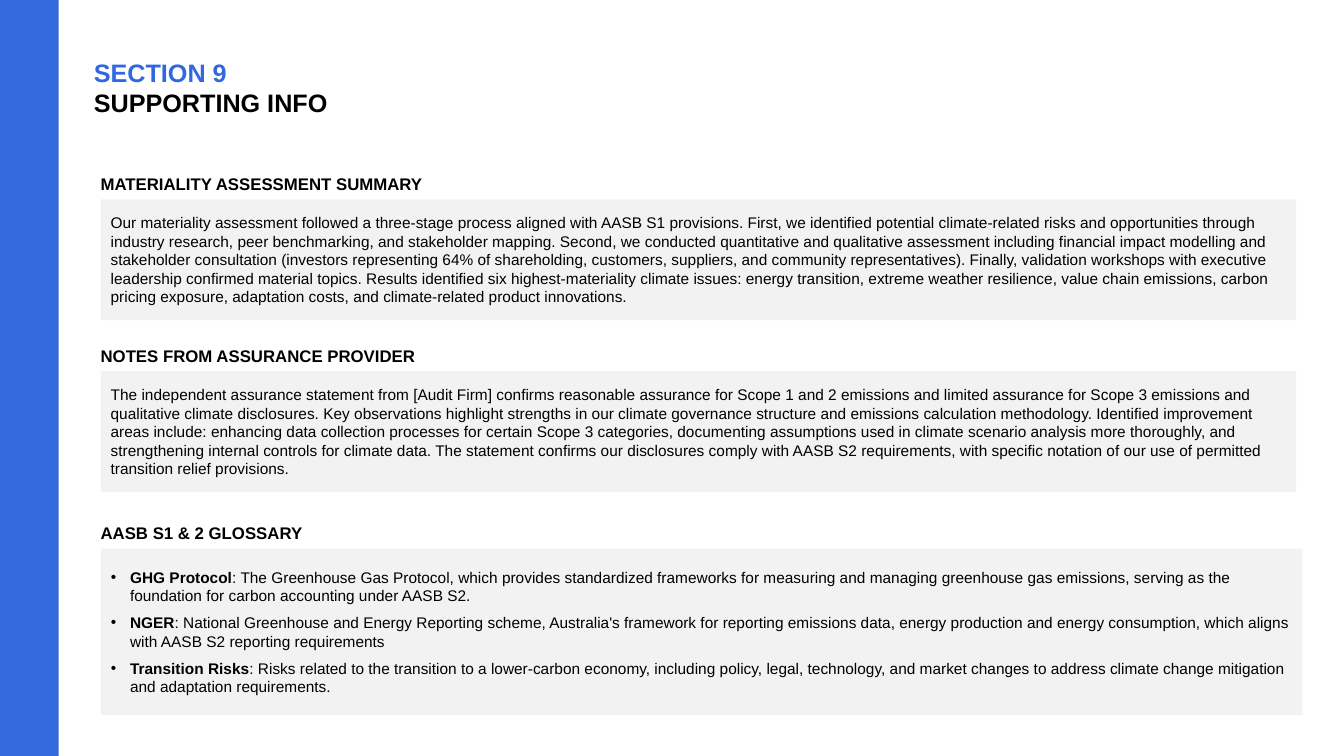
from dataclasses import dataclass

from pptx import Presentation
from pptx.dml.color import RGBColor
from pptx.enum.shapes import MSO_SHAPE
from pptx.enum.text import MSO_ANCHOR, MSO_AUTO_SIZE, PP_ALIGN
from pptx.util import Inches, Pt


@dataclass(frozen=True)
class Theme:
    font: str = "Arial"
    bar: str = "3468DD"
    accent: str = "3168E2"
    text: str = "000000"
    panel: str = "F2F2F2"
    title_size: int = 18
    heading_size: int = 12
    body_size: int = 11
    gap: int = 6


THEME = Theme()
SLIDE_W, SLIDE_H = Inches(13.333), Inches(7.5)
INSET = Inches(0.1)
BULLET_INDENT = Inches(0.19)

# Boxes are left, top, width, height in percent of the slide
BAR_BOX = (0, 0, 4.37, 100)
TITLE_BOX = (6.23, 6.93, 50.1, 9.47)
HEADING_W, HEADING_H = 42.45, 4.07
MATERIALITY_BOX = (7.5, 22.3, 88.95, 20.07)
ASSURANCE_BOX = (7.5, 45.03, 88.95, 20.07)
GLOSSARY_BOX = (7.5, 68.5, 89.4, 26.07)

MATERIALITY = (
    "Our materiality assessment followed a three-stage process aligned with AASB S1 provisions. "
    "First, we identified potential climate-related risks and opportunities through industry "
    "research, peer benchmarking, and stakeholder mapping. Second, we conducted quantitative and "
    "qualitative assessment including financial impact modelling and stakeholder consultation "
    "(investors representing 64% of shareholding, customers, suppliers, and community "
    "representatives). Finally, validation workshops with executive leadership confirmed material "
    "topics. Results identified six highest-materiality climate issues: energy transition, extreme "
    "weather resilience, value chain emissions, carbon pricing exposure, adaptation costs, and "
    "climate-related product innovations."
)
ASSURANCE = (
    "The independent assurance statement from [Audit Firm] confirms reasonable assurance for Scope 1 "
    "and 2 emissions and limited assurance for Scope 3 emissions and qualitative climate "
    "disclosures. Key observations highlight strengths in our climate governance structure and "
    "emissions calculation methodology. Identified improvement areas include: enhancing data "
    "collection processes for certain Scope 3 categories, documenting assumptions used in climate "
    "scenario analysis more thoroughly, and strengthening internal controls for climate data. The "
    "statement confirms our disclosures comply with AASB S2 requirements, with specific notation of "
    "our use of permitted transition relief provisions."
)
GLOSSARY = [
    ("GHG Protocol", "The Greenhouse Gas Protocol, which provides standardized frameworks for "
     "measuring and managing greenhouse gas emissions, serving as the foundation for carbon "
     "accounting under AASB S2."),
    ("NGER", "National Greenhouse and Energy Reporting scheme, Australia's framework for reporting "
     "emissions data, energy production and energy consumption, which aligns with AASB S2 reporting "
     "requirements"),
    ("Transition Risks", "Risks related to the transition to a lower-carbon economy, including "
     "policy, legal, technology, and market changes to address climate change mitigation and "
     "adaptation requirements."),
]


def to_emu(box):
    """Turn percent of the slide into lengths."""
    x, y, w, h = box
    return (round(SLIDE_W * x / 100), round(SLIDE_H * y / 100),
            round(SLIDE_W * w / 100), round(SLIDE_H * h / 100))


def place(sp, box):
    sp.left, sp.top, sp.width, sp.height = to_emu(box)


def fill(sp, color):
    sp.fill.solid()
    sp.fill.fore_color.rgb = RGBColor.from_string(color)
    sp.line.fill.background()


def add_rect(slide, box, color):
    sp = slide.shapes.add_shape(MSO_SHAPE.RECTANGLE, *to_emu(box))
    sp.shadow.inherit = False
    fill(sp, color)
    return sp


def set_frame(tf, anchor):
    tf.word_wrap = True
    tf.auto_size = MSO_AUTO_SIZE.NONE
    tf.vertical_anchor = anchor


def add_run(p, text, size=THEME.body_size, color=THEME.text, bold=False):
    p.alignment = PP_ALIGN.LEFT
    p.space_before = Pt(0)
    r = p.add_run()
    r.text = text
    r.font.name = THEME.font
    r.font.size = Pt(size)
    r.font.bold = bold
    r.font.color.rgb = RGBColor.from_string(color)


def add_title(slide, box, section, name):
    title = slide.shapes.title
    place(title, box)
    tf = title.text_frame
    set_frame(tf, MSO_ANCHOR.TOP)
    add_run(tf.paragraphs[0], section, size=THEME.title_size, color=THEME.accent, bold=True)
    add_run(tf.add_paragraph(), name, size=THEME.title_size, bold=True)


def add_heading(slide, box, text):
    """Write the heading on top of the box and return the panel area below."""
    x, y, w, h = box
    left, top, width, height = to_emu((x, y, HEADING_W, HEADING_H))
    tf = slide.shapes.add_textbox(left - INSET, top, width, height).text_frame
    set_frame(tf, MSO_ANCHOR.TOP)
    add_run(tf.paragraphs[0], text, size=THEME.heading_size, bold=True)
    return x, y + HEADING_H, w, h - HEADING_H


def add_text_section(slide, box, heading, text):
    panel = add_rect(slide, add_heading(slide, box, heading), THEME.panel)
    tf = panel.text_frame
    set_frame(tf, MSO_ANCHOR.MIDDLE)
    p = tf.paragraphs[0]
    add_run(p, text)
    p.space_after = Pt(THEME.gap)


def add_glossary(slide, box, heading, entries):
    body = slide.placeholders[1]
    place(body, add_heading(slide, box, heading))
    fill(body, THEME.panel)
    tf = body.text_frame
    set_frame(tf, MSO_ANCHOR.MIDDLE)
    for i, (term, meaning) in enumerate(entries):
        p = tf.add_paragraph() if i else tf.paragraphs[0]
        add_run(p, term, bold=True)
        add_run(p, f": {meaning}")
        # The layout supplies the bullet, only its indent changes
        pPr = p._p.get_or_add_pPr()
        pPr.set("marL", str(BULLET_INDENT))
        pPr.set("indent", str(-BULLET_INDENT))
        p.space_after = Pt(THEME.gap if i < len(entries) - 1 else 0)


def main():
    prs = Presentation()
    prs.slide_width, prs.slide_height = SLIDE_W, SLIDE_H
    slide = prs.slides.add_slide(prs.slide_layouts[1])

    # Side bar and title
    add_rect(slide, BAR_BOX, THEME.bar)
    add_title(slide, TITLE_BOX, "SECTION 9", "SUPPORTING INFO")

    # Sections
    add_text_section(slide, MATERIALITY_BOX, "MATERIALITY ASSESSMENT SUMMARY", MATERIALITY)
    add_text_section(slide, ASSURANCE_BOX, "NOTES FROM ASSURANCE PROVIDER", ASSURANCE)
    add_glossary(slide, GLOSSARY_BOX, "AASB S1 & 2 GLOSSARY", GLOSSARY)

    prs.save("out.pptx")


if __name__ == "__main__":
    main()
